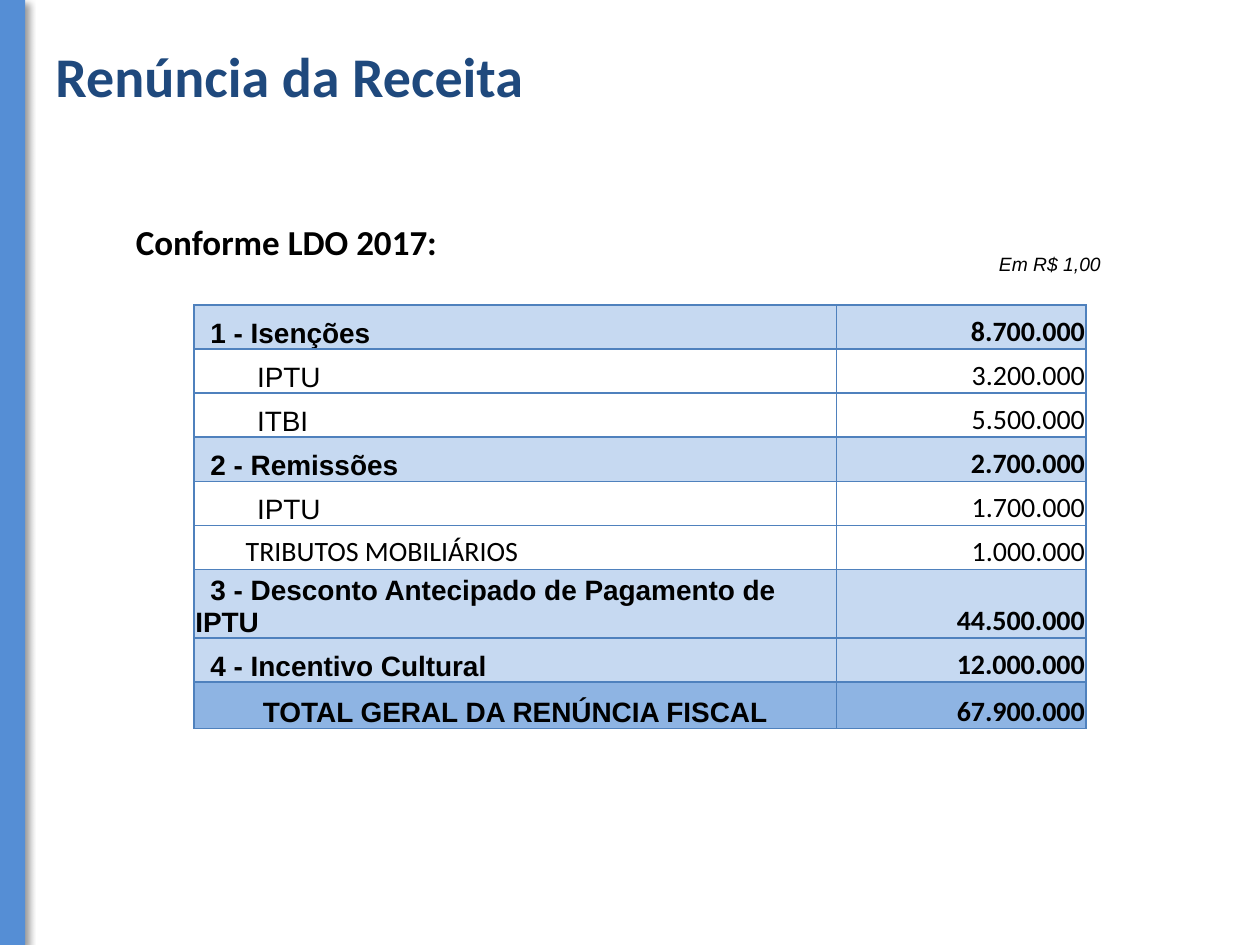
from lxml import etree
from pptx import Presentation
from pptx import util as u
from pptx.dml.color import RGBColor
from pptx.enum import shapes, text
from pptx.oxml import ns, parse_xml

NAVY = RGBColor(0x1F, 0x49, 0x7D)
BLACK = RGBColor(0, 0, 0)
WHITE = RGBColor(255, 255, 255)
BAR_BLUE = RGBColor(0x55, 0x8E, 0xD5)
BORDER_BLUE = RGBColor(0x4F, 0x81, 0xBD)
GROUP_BLUE = RGBColor(0xC6, 0xD9, 0xF1)
TOTAL_BLUE = RGBColor(0x8E, 0xB4, 0xE3)

LEFT, CENTER, RIGHT = text.PP_ALIGN.LEFT, text.PP_ALIGN.CENTER, text.PP_ALIGN.RIGHT

# Label, value, fill, bold, label font, first-line indent in inches, label alignment
ROWS = [
    ("1 - Isenções", "8.700.000", GROUP_BLUE, True, "Arial", 0.12, LEFT),
    ("IPTU", "3.200.000", WHITE, False, "Arial", 0.49, LEFT),
    ("ITBI", "5.500.000", WHITE, False, "Arial", 0.49, LEFT),
    ("2 - Remissões", "2.700.000", GROUP_BLUE, True, "Arial", 0.12, LEFT),
    ("IPTU", "1.700.000", WHITE, False, "Arial", 0.49, LEFT),
    ("TRIBUTOS MOBILIÁRIOS", "1.000.000", WHITE, False, "Calibri", 0.4, LEFT),
    ("3 - Desconto Antecipado de Pagamento de IPTU", "44.500.000",
     GROUP_BLUE, True, "Arial", 0.12, LEFT),
    ("4 - Incentivo Cultural", "12.000.000", GROUP_BLUE, True, "Arial", 0.12, LEFT),
    ("TOTAL GERAL DA RENÚNCIA FISCAL", "67.900.000",
     TOTAL_BLUE, True, "Arial", 0, CENTER),
]


def add_run(paragraph, words, size, font, color=BLACK, bold=False, italic=False):
    run = paragraph.add_run()
    run.text = words
    run.font.size = u.Pt(size)
    run.font.name = font
    run.font.color.rgb = color
    run.font.bold = bold
    run.font.italic = italic


def set_title(slide, words):
    title = slide.shapes.title
    title.left, title.top = u.Inches(0.04), u.Inches(0.28)
    title.width, title.height = u.Inches(8.19), u.Inches(0.64)
    frame = title.text_frame
    frame.margin_left = u.Inches(0.4)
    frame.vertical_anchor = text.MSO_ANCHOR.TOP
    frame.auto_size = text.MSO_AUTO_SIZE.NONE
    paragraph = frame.paragraphs[0]
    paragraph.alignment = LEFT
    add_run(paragraph, words, 32, "Calibri", NAVY, bold=True)


def add_label(slide, words, left, top, width, height, size, font, **style):
    box = slide.shapes.add_textbox(*map(u.Inches, (left, top, width, height)))
    box.text_frame.word_wrap = False
    add_run(box.text_frame.paragraphs[0], words, size, font, **style)


def add_side_bar(slide):
    bar = slide.shapes.add_shape(shapes.MSO_SHAPE.RECTANGLE, 0, 0,
                                 u.Inches(0.2), u.Inches(7.5))
    bar.fill.solid()
    bar.fill.fore_color.rgb = BAR_BLUE
    bar.line.fill.background()
    bar.shadow.inherit = False
    effects = bar.element.spPr.find(ns.qn("a:effectLst"))
    effects.append(parse_xml(
        f'<a:outerShdw {ns.nsdecls("a")} blurRad="{u.Pt(4)}" dist="{u.Pt(3)}" '
        'dir="2700000" algn="tl" rotWithShape="0">'
        '<a:srgbClr val="000000"><a:alpha val="40000"/></a:srgbClr></a:outerShdw>'))


def set_borders(cell):
    properties = cell._tc.get_or_add_tcPr()
    for side in ("lnL", "lnR", "lnT", "lnB"):
        line = etree.SubElement(properties, ns.qn(f"a:{side}"), w=str(u.Pt(1)))
        fill = etree.SubElement(line, ns.qn("a:solidFill"))
        etree.SubElement(fill, ns.qn("a:srgbClr"), val=str(BORDER_BLUE))


def fill_cell(cell, words, fill, bold, font, alignment, indent=0):
    set_borders(cell)
    cell.fill.solid()
    cell.fill.fore_color.rgb = fill
    cell.margin_left = cell.margin_top = cell.margin_right = u.Inches(0.01)
    cell.margin_bottom = 0
    cell.vertical_anchor = text.MSO_ANCHOR.BOTTOM
    paragraph = cell.text_frame.paragraphs[0]
    paragraph.alignment = alignment
    if indent:
        paragraph._p.get_or_add_pPr().set("indent", str(u.Inches(indent)))
    add_run(paragraph, words, 16, font, bold=bold)


def add_waiver_table(slide):
    table = slide.shapes.add_table(
        len(ROWS), 2, u.Inches(1.54), u.Inches(2.42),
        u.Inches(7.08), u.Inches(3.17)).table
    table.first_row = table.horz_banding = False
    table.columns[0].width, table.columns[1].width = u.Inches(5.1), u.Inches(1.98)
    for row in table.rows:
        row.height = u.Inches(0.35)
    table.rows[len(ROWS) - 1].height = u.Inches(0.37)
    for index, (label, value, fill, bold, font, indent, alignment) in enumerate(ROWS):
        fill_cell(table.cell(index, 0), label, fill, bold, font, alignment, indent)
        fill_cell(table.cell(index, 1), value, fill, bold, "Calibri", RIGHT)


def main():
    presentation = Presentation()
    presentation.slide_width, presentation.slide_height = u.Inches(10), u.Inches(7.5)
    slide = presentation.slides.add_slide(presentation.slide_layouts[5])

    # Headings
    set_title(slide, "Renúncia da Receita")
    add_label(slide, "Em R$ 1,00", 7.83, 1.95, 1.02, 0.29, 11, "Arial", italic=True)
    add_label(slide, "Conforme LDO 2017:", 0.98, 1.7, 2.61, 0.44, 20, "Calibri", bold=True)

    # Side decoration and figures
    add_side_bar(slide)
    add_waiver_table(slide)
    presentation.save("out.pptx")


if __name__ == "__main__":
    main()
